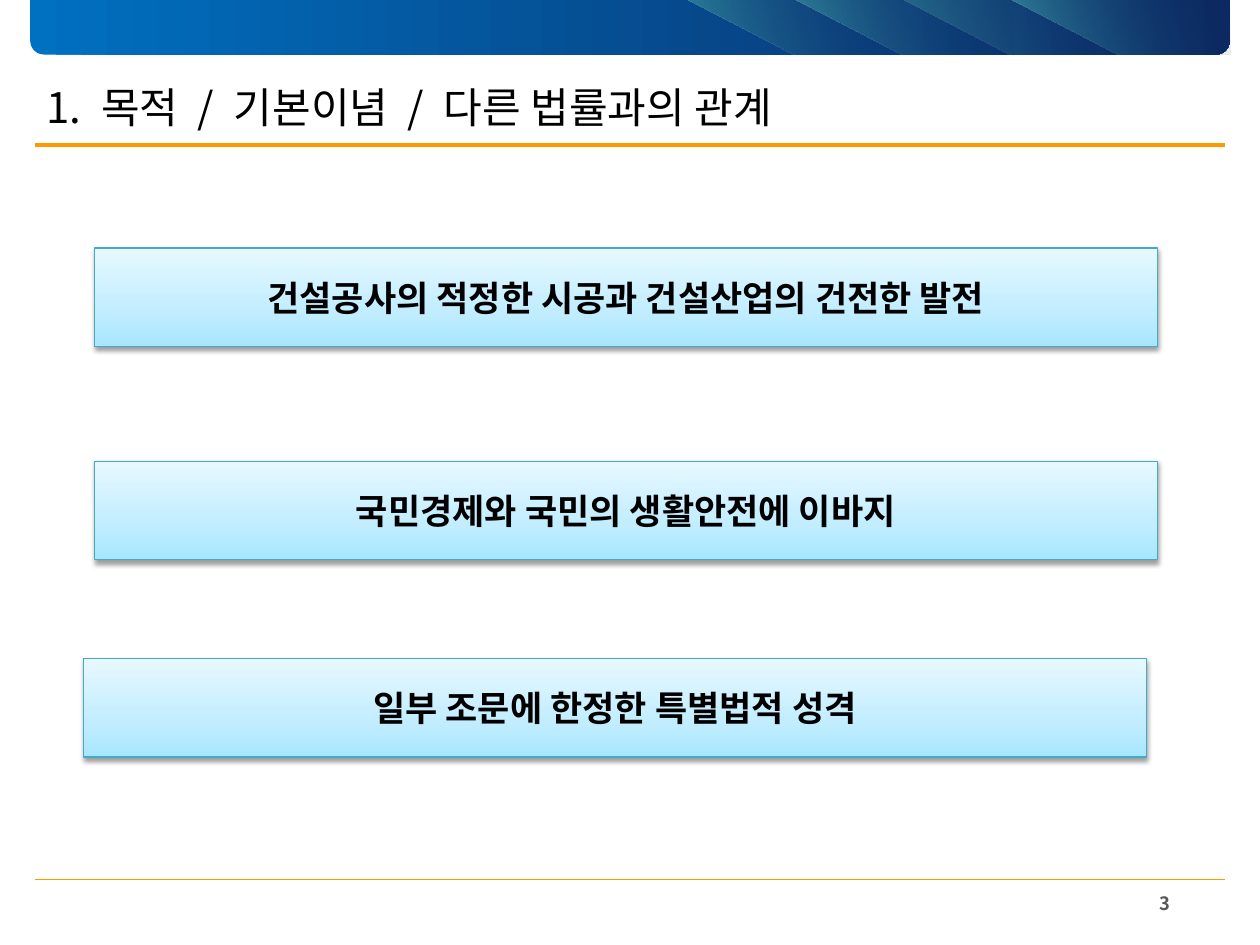
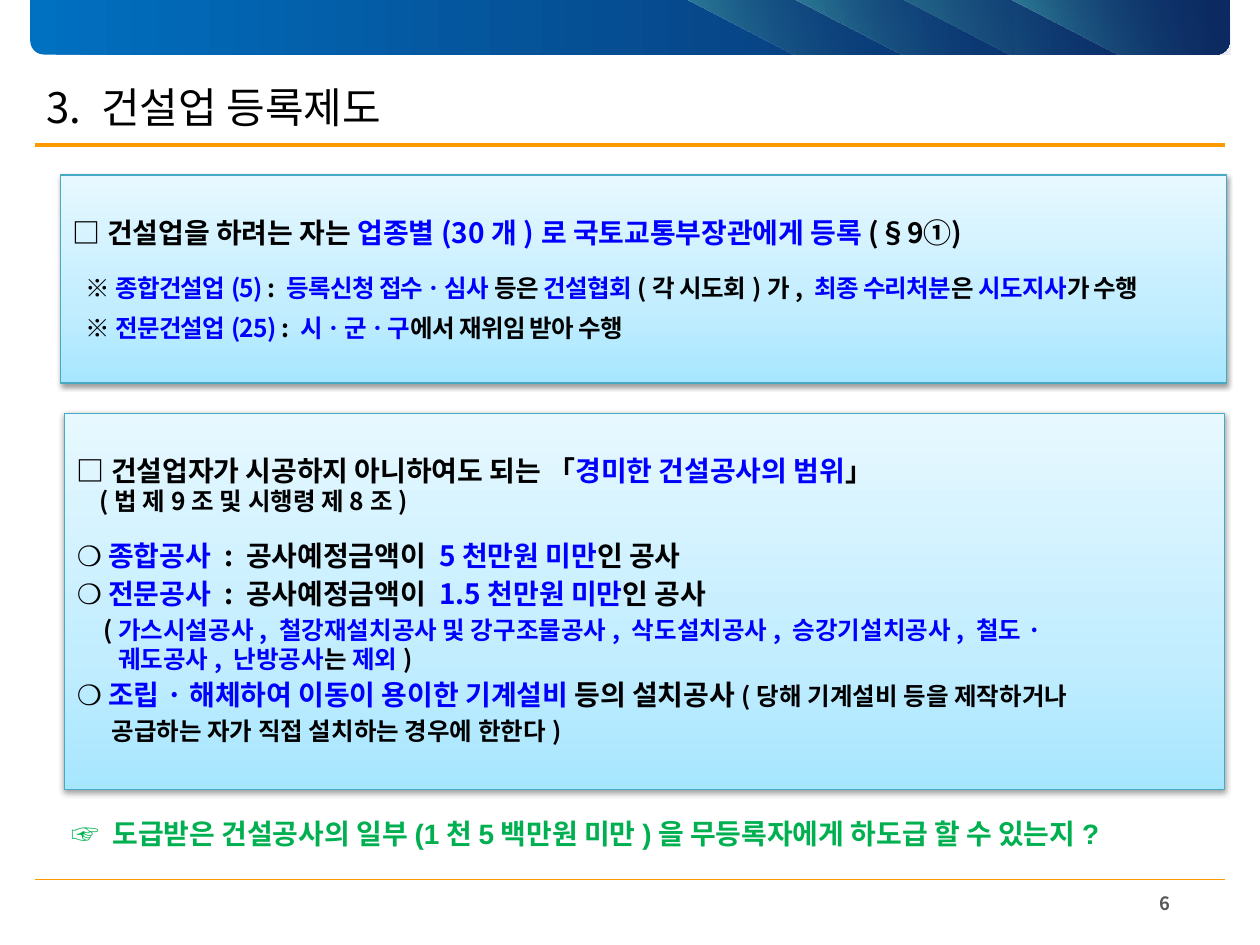
from dataclasses import dataclass

from pptx import Presentation
from pptx import util as u
from pptx.dml.color import RGBColor
from pptx.enum import shapes, text
from pptx.oxml import ns, xmlchemy as xml

Cm, Pt = u.Cm, u.Pt
SANS, ARIAL = "Noto Sans CJK KR", "Arial"

BLACK = RGBColor(0x00, 0x00, 0x00)
BLUE = RGBColor(0x00, 0x00, 0xFF)
GREEN = RGBColor(0x00, 0xB0, 0x50)
GRAY = RGBColor(0x59, 0x59, 0x59)
ORANGE = RGBColor(0xFF, 0x99, 0x00)
EDGE = RGBColor(0x46, 0xAA, 0xC5)
SKY = RGBColor(0x00, 0x70, 0xC0)
NAVY = RGBColor(0x0C, 0x29, 0x62)
TEAL = RGBColor(0x31, 0x85, 0x9C)

# Gradient stops: position, colour, opacity (all in percent)
BAND = [(0, SKY, 100), (100, NAVY, 100)]
RAY = [(0, TEAL, 100), (100, NAVY, 0)]
PANEL = [(0, RGBColor(0xA7, 0xE6, 0xFF), 100),
         (35, RGBColor(0xC1, 0xED, 0xFF), 100),
         (100, RGBColor(0xE7, 0xF8, 0xFF), 100)]


@dataclass
class Line:
    """One paragraph; every second part between bars is blue."""
    text: str
    size: float = 16
    gap: float = 0
    left: float = 0
    hang: float = 0
    track: float = 0
    tail: str = ""
    color: RGBColor = BLACK
    font: str = SANS
    bold: bool = True
    align: text.PP_ALIGN = text.PP_ALIGN.LEFT
    pitch: float = 1


def add(parent, tag, **attrs):
    node = xml.OxmlElement(tag)
    for key, val in attrs.items():
        node.set(key, str(val))
    parent.append(node)
    return node


def tint(parent, color, alpha):
    node = add(parent, "a:srgbClr", val=color)
    if alpha < 100:
        add(node, "a:alpha", val=alpha * 1000)


def blend(shape, stops, angle):
    """Fill with a gradient; the angle turns clockwise."""
    shape.fill.gradient()
    shape.fill.gradient_angle = 360 - angle
    group = shape._element.spPr.find(ns.qn("a:gradFill")).find(ns.qn("a:gsLst"))
    for old in list(group):
        group.remove(old)
    for pos, color, alpha in stops:
        tint(add(group, "a:gs", pos=pos * 1000), color, alpha)


def add_run(para, words, line, size, color):
    run = para.add_run()
    run.text = words
    font = run.font
    font.name, font.size, font.bold = line.font, Pt(size), line.bold
    font.color.rgb = color
    props = run._r.get_or_add_rPr()
    add(props, "a:ea", typeface=SANS)
    if line.track:
        props.set("spc", str(round(line.track * 100)))


def write(shape, lines):
    frame = shape.text_frame
    frame.word_wrap = True
    frame.vertical_anchor = text.MSO_ANCHOR.MIDDLE
    for i, line in enumerate(lines):
        para = frame.add_paragraph() if i else frame.paragraphs[0]
        para.alignment = line.align
        para.line_spacing = line.pitch
        para.space_before = Pt(line.gap)
        props = para._p.get_or_add_pPr()
        props.set("marL", str(Cm(line.left)))
        props.set("indent", str(Cm(-line.hang)))
        for k, part in enumerate(line.text.split("|")):
            if part:
                add_run(para, part, line, line.size, BLUE if k % 2 else line.color)
        if line.tail:
            add_run(para, line.tail, line, 14, line.color)


def label(slide, box, line):
    write(slide.shapes.add_textbox(*map(Cm, box)), [line])


def panel(slide, box, lines):
    """Light blue box with a soft shadow."""
    shape = slide.shapes.add_shape(shapes.MSO_SHAPE.RECTANGLE, *map(Cm, box))
    blend(shape, PANEL, 270)
    shape.line.color.rgb = EDGE
    shape.line.width = Pt(0.75)
    shape.shadow.inherit = False
    effects = shape._element.spPr.find(ns.qn("a:effectLst"))
    shade = add(effects, "a:outerShdw", blurRad=Pt(3.1), dist=Pt(1.6),
                dir=90 * 60000, rotWithShape=0)
    tint(shade, BLACK, 38)
    write(shape, lines)


def rule(slide, y, width):
    line = slide.shapes.add_connector(shapes.MSO_CONNECTOR.STRAIGHT,
                                      Cm(0.7), Cm(y), Cm(24.7), Cm(y))
    line.line.color.rgb = ORANGE
    line.line.width = Pt(width)
    add(line._element.spPr, "a:effectLst")


def finish(shape, stops, angle):
    blend(shape, stops, angle)
    shape.line.fill.background()
    shape.shadow.inherit = False


def banner(slide):
    """Top band with four slanted rays."""
    high = 1.1
    band = slide.shapes.add_shape(shapes.MSO_SHAPE.ROUND_2_SAME_RECTANGLE,
                                  Cm(0.61), 0, Cm(24.18), Cm(high))
    band.adjustments[0], band.adjustments[1] = 0, 0.25
    finish(band, BAND, 0)
    for i in (0, 2, 3, 1):
        x = 13.84 + 2.18 * i
        pen = slide.shapes.build_freeform(Cm(x), 0)
        pen.add_line_segments([(Cm(x + 4.43), 0), (Cm(x + 4.43), Cm(high)),
                               (Cm(x + 2.18), Cm(high))])
        finish(pen.convert_to_shape(), RAY, 340)


def page(deck, title, number):
    slide = deck.slides.add_slide(deck.slide_layouts[6])
    rule(slide, 2.92, 2)
    rule(slide, 17.73, 0.75)
    banner(slide)
    label(slide, (21.89, 17.83, 3.2, 0.74),
          Line(str(number), 10.5, color=GRAY, align=text.PP_ALIGN.CENTER))
    label(slide, (0.69, 1.37, 20.24, 1.55), Line(title, 24, bold=False))
    return slide


def purpose(deck):
    slide = page(deck, "1. 목적 / 기본이념 / 다른 법률과의 관계", 3)
    for x, y, words in (
            (1.9, 5, "건설공사의 적정한 시공과 건설산업의 건전한 발전"),
            (1.9, 9.3, "국민경제와 국민의 생활안전에 이바지"),
            (1.68, 13.28, "일부 조문에 한정한 특별법적 성격")):
        panel(slide, (x, y, 21.44, 1.98),
              [Line(words, 20, font=ARIAL, align=text.PP_ALIGN.CENTER)])


def signup(deck):
    slide = page(deck, "3. 건설업 등록제도", 6)
    note = dict(size=14, left=0.26, track=-0.4)
    panel(slide, (1.22, 3.53, 23.5, 4.19), [
        Line("□ 건설업을 하려는 자는 |업종별(30개)로 국토교통부장관에게 등록|(§9①)"),
        Line("※ |종합건설업(5) |: |등록신청 접수ㆍ심사| 등은 |건설협회|"
             "(각 시도회)가, |최종 수리처분|은 |시도지사|가 수행", gap=14, **note),
        Line("※ |전문건설업(25) |: |시ㆍ군ㆍ구|에서 재위임 받아 수행", gap=6, **note),
    ])
    lines = [
        Line("□ 건설업자가 시공하지 아니하여도 되는 「|경미한 건설공사의 범위|」"),
        Line("(법 제9조 및 시행령 제8조)", 14, 1.2, 0.46),
        Line("❍ |종합공사 |: 공사예정금액이 |5천만원 미만|인 공사", gap=15),
        Line("❍ |전문공사 |: 공사예정금액이 |1.5천만원 미만|인 공사", gap=4.4),
        Line("(|가스시설공사, 철강재설치공사 및 강구조물공사, 삭도설치공사, "
             "승강기설치공사, 철도·", 14, 4.4, 0.53),
        Line("|궤도공사, 난방공사|는 |제외|)", 14, 1.2, 0.83),
        Line("❍ |조립·해체하여 이동이 용이한 기계설비 |등의 설치공사", gap=4.4,
             tail="(당해 기계설비 등을 제작하거나"),
        Line("공급하는 자가 직접 설치하는 경우에 한한다)", 14, 4.4, 0.7),
    ]
    for line in lines:
        line.pitch = 0.9
    panel(slide, (1.3, 8.33, 23.39, 7.59), lines)
    label(slide, (1.19, 16.33, 23.5, 0.94),
          Line("☞\t도급받은 건설공사의 일부(1천5백만원 미만)을 "
               "무등록자에게 하도급 할 수 있는지?",
               left=0.83, hang=0.83, color=GREEN, font=ARIAL))


def main():
    deck = Presentation()
    deck.slide_width, deck.slide_height = Cm(25.4), Cm(19.05)
    purpose(deck)
    signup(deck)
    deck.save("out.pptx")


if __name__ == "__main__":
    main()
